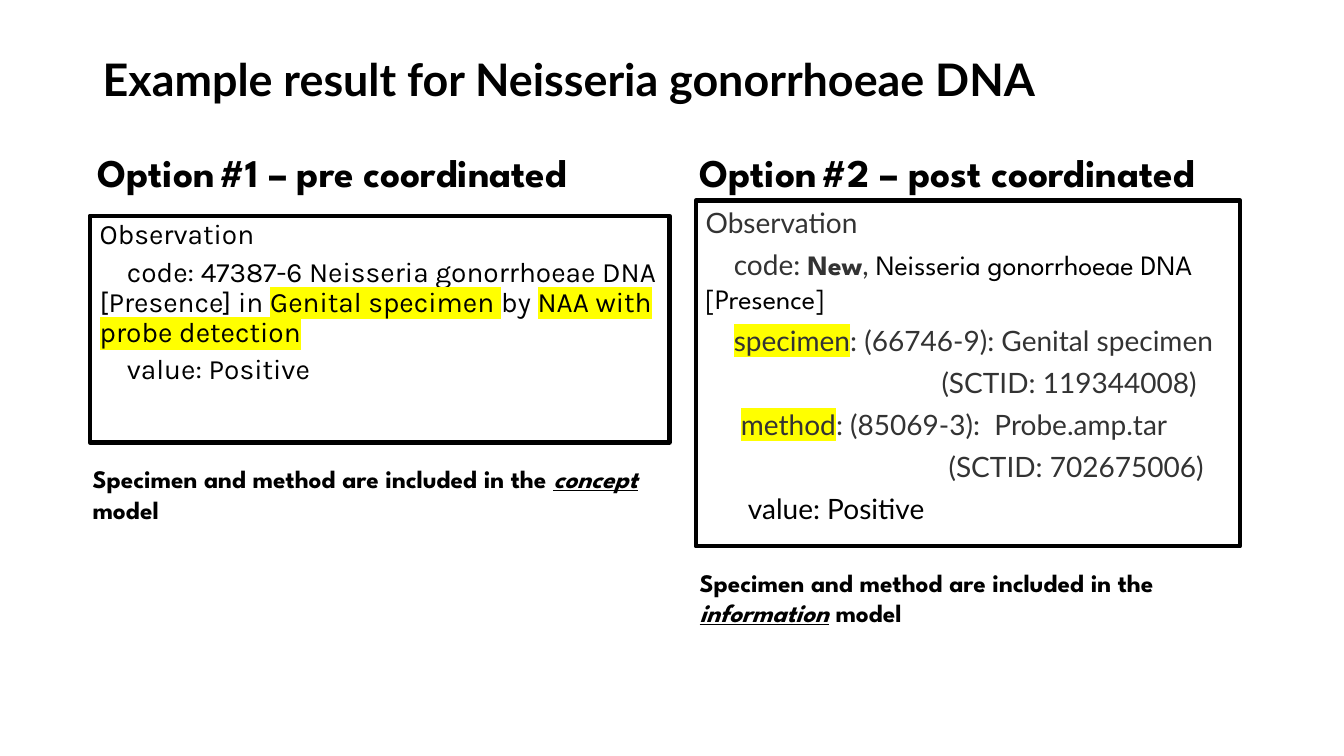
import pptx
import pptx.dml.color
import pptx.enum.shapes
import pptx.enum.text
import pptx.oxml
import pptx.oxml.ns
import pptx.util

PX = 9144
BLACK = "000000"
GREY = "333333"
YELLOW = "FFFF00"
HEADING_FONT = "League Spartan"


def colour(value):
    return pptx.dml.color.RGBColor.from_string(value)


class SlideBuilder:
    def __init__(self, slide):
        self.slide = slide

    def add_run(self, paragraph, text, font, size, ink=BLACK, bold=False,
                emphasis=False, highlight=None):
        run = paragraph.add_run()
        run.text = text
        run.font.size = pptx.util.Pt(size)
        run.font.name = font
        run.font.color.rgb = colour(ink)
        run.font.bold = bold
        if emphasis:
            run.font.italic = True
            run.font.underline = True
        if highlight:
            mark = pptx.oxml.parse_xml(
                f'<a:highlight {pptx.oxml.ns.nsdecls("a")}>'
                f'<a:srgbClr val="{highlight}"/></a:highlight>')
            properties = run.font._element
            properties.find(pptx.oxml.ns.qn("a:latin")).addprevious(mark)

    def fill_text(self, frame, lines, base, spacing=1.0, before=0):
        frame.word_wrap = True
        for number, (indent, runs) in enumerate(lines):
            paragraph = frame.add_paragraph() if number else frame.paragraphs[0]
            properties = paragraph._p.get_or_add_pPr()
            properties.set("marL", "0")
            properties.set("indent", str(indent * PX))
            paragraph.alignment = pptx.enum.text.PP_ALIGN.LEFT
            paragraph.line_spacing = spacing
            paragraph.space_before = pptx.util.Pt(before if number else 0)
            for text, changes in runs:
                self.add_run(paragraph, text, **{**base, **changes})

    def text(self, box, runs, base, spacing=1.0,
             anchor=pptx.enum.text.MSO_ANCHOR.TOP):
        frame = self.slide.shapes.add_textbox(*(n * PX for n in box)).text_frame
        frame.vertical_anchor = anchor
        self.fill_text(frame, [(0, runs)], base, spacing)

    def panel(self, box, lines, base, spacing, before):
        panel = self.slide.shapes.add_shape(
            pptx.enum.shapes.MSO_SHAPE.RECTANGLE, *(n * PX for n in box))
        panel.shadow.inherit = False
        panel.fill.background()
        panel.line.color.rgb = colour(BLACK)
        panel.line.width = pptx.util.Pt(3)
        panel.text_frame.vertical_anchor = pptx.enum.text.MSO_ANCHOR.TOP
        self.fill_text(panel.text_frame, lines, base, spacing, before)

    def option_heading(self, box, label):
        self.text(box, [("Option", {}), (" ", {"size": 14}), (label, {})],
                  {"font": HEADING_FONT, "size": 28, "bold": True})

    def caption(self, box, model):
        self.text(box, [("Specimen and method are included in the ", {}),
                        (model, {"emphasis": True}), (" model", {})],
                  {"font": HEADING_FONT, "size": 18, "bold": True})


def main():
    presentation = pptx.Presentation()
    presentation.slide_width = 1333 * PX
    presentation.slide_height = 750 * PX
    builder = SlideBuilder(
        presentation.slides.add_slide(presentation.slide_layouts[6]))
    marked = {"highlight": YELLOW}

    builder.text((92, 40, 1150, 82),
                 [("Example result for Neisseria gonorrhoeae DNA", {})],
                 {"font": "Lato", "size": 32, "bold": True}, 0.9,
                 pptx.enum.text.MSO_ANCHOR.MIDDLE)

    pre_coordinated = [
        (0, [("Observation", {})]),
        (27, [("code: 47387-6 Neisseria gonorrhoeae DNA [Presence] in ", {}),
              ("Genital specimen ", marked),
              ("by ", {}),
              ("NAA with probe detection", marked)]),
        (27, [("value: Positive", {})]),
    ]
    builder.panel((89, 214, 575, 225), pre_coordinated,
                  {"font": "Karla", "size": 20}, 0.9, 5)

    post_coordinated = [
        (0, [("Observation", {})]),
        (28, [("code: ", {}),
              ("New", {"font": HEADING_FONT, "bold": True}),
              (", ", {}),
              ("Neisseria gonorrhoeae DNA [Presence]",
               {"font": HEADING_FONT, "ink": BLACK})]),
        (28, [("specimen", marked), (": (66746-9): Genital specimen", {})]),
        (234, [("(SCTID: 119344008)", {})]),
        (35, [("method", marked), (": (85069-3):  Probe.amp.tar", {})]),
        (241, [("(SCTID: 702675006)", {})]),
        (42, [("value: Positive", {"ink": BLACK})]),
    ]
    builder.panel((690, 199, 540, 343), post_coordinated,
                  {"font": "Lato", "size": 20, "ink": GREY}, 1.0, 6)

    builder.option_heading((87, 142, 557, 57), "#1 – pre coordinated")
    builder.option_heading((684, 142, 568, 57), "#2 – post coordinated")
    builder.caption((82, 455, 589, 101), "concept")
    builder.caption((684, 558, 589, 101), "information")

    presentation.save("out.pptx")


if __name__ == "__main__":
    main()
